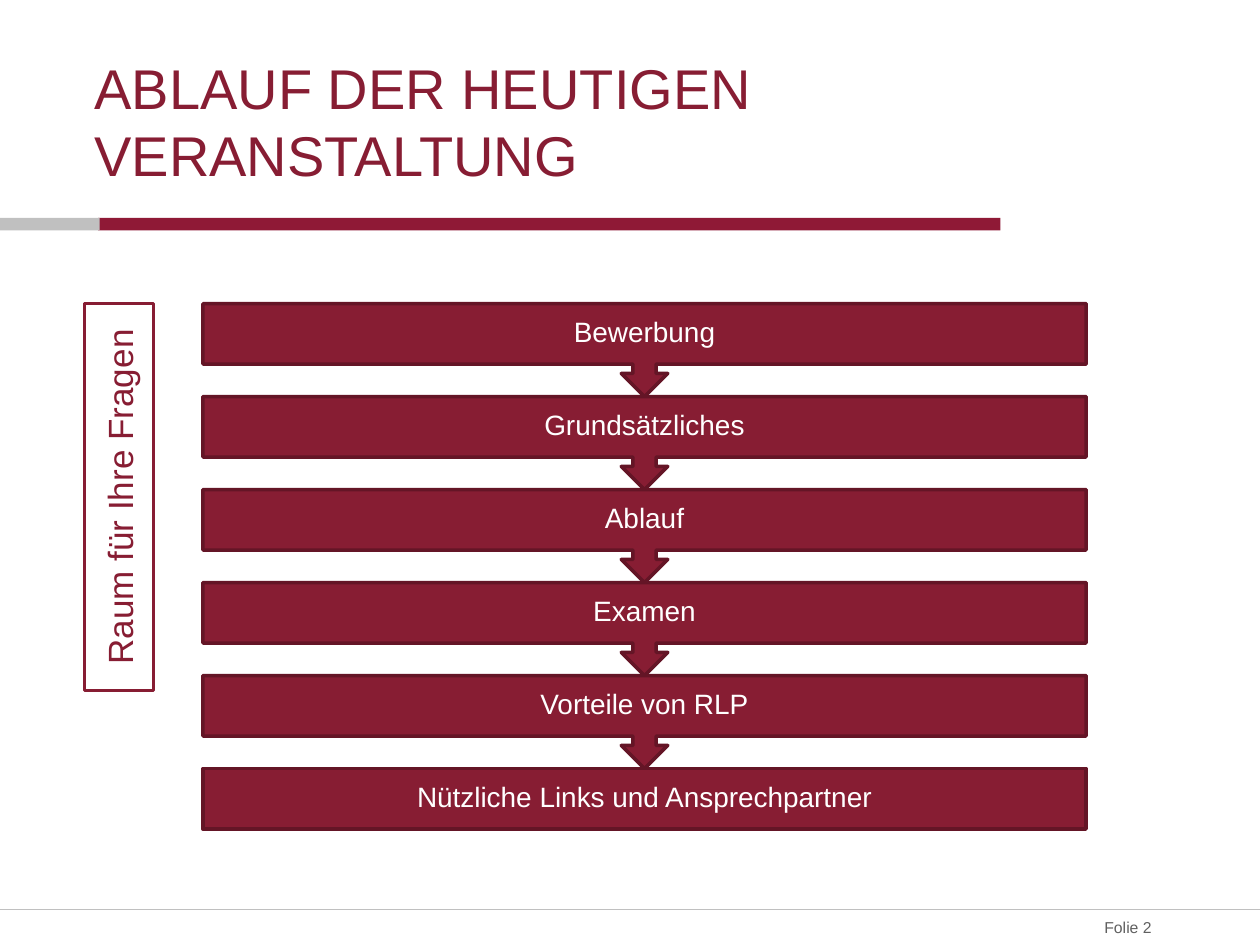
from lxml import etree
from pptx import Presentation
from pptx.dml.color import RGBColor
from pptx.enum.shapes import MSO_CONNECTOR, MSO_SHAPE
from pptx.enum.text import MSO_ANCHOR, PP_ALIGN
from pptx.oxml.ns import qn
from pptx.util import Inches, Pt

RECT = MSO_SHAPE.RECTANGLE
CALLOUT = MSO_SHAPE.UP_ARROW_CALLOUT
STRAIGHT = MSO_CONNECTOR.STRAIGHT
MIDDLE, BOTTOM = MSO_ANCHOR.MIDDLE, MSO_ANCHOR.BOTTOM
LEFT, CENTER, RIGHT = PP_ALIGN.LEFT, PP_ALIGN.CENTER, PP_ALIGN.RIGHT

WINE = RGBColor(0x87, 0x1D, 0x33)
DARK_WINE = RGBColor(0x64, 0x15, 0x26)
BAR_RED = RGBColor(0x8F, 0x19, 0x36)
SILVER = RGBColor(0xC0, 0xC0, 0xC0)
GRAY = RGBColor(0x60, 0x60, 0x60)
WHITE = RGBColor(0xFF, 0xFF, 0xFF)

STEPS = ["Bewerbung", "Grundsätzliches", "Ablauf", "Examen",
         "Vorteile von RLP", "Nützliche Links und Ansprechpartner"]


def write(shape, text, size, color, align, anchor=MIDDLE, margin=0, spacing=None):
    frame = shape.text_frame
    frame_format = {"word_wrap": True, "vertical_anchor": anchor}
    for side in ("left", "top", "right", "bottom"):
        frame_format[f"margin_{side}"] = Inches(margin)
    for name, value in frame_format.items():
        setattr(frame, name, value)
    paragraph = frame.paragraphs[0]
    paragraph.text = text
    paragraph.alignment = align
    paragraph.line_spacing = spacing
    for name, value in {"name": "Arial", "size": Pt(size)}.items():
        setattr(paragraph.font, name, value)
    paragraph.font.color.rgb = color


def add_label(slide, box, *args, **kwargs):
    label = slide.shapes.add_textbox(*map(Inches, box))
    write(label, *args, **kwargs)


def add_block(slide, kind, box, fill, line=None, rotation=0):
    block = slide.shapes.add_shape(kind, *map(Inches, box))
    block.shadow.inherit = False
    block.rotation = rotation
    block.fill.solid()
    block.fill.fore_color.rgb = fill
    if line is None:
        block.line.fill.background()
    else:
        block.line.color.rgb = line
        block.line.width = Pt(2)
    return block


def add_header(slide, left, top, width, height):
    add_label(slide, (left, top, width, height),
              "ABLAUF DER HEUTIGEN VERANSTALTUNG", 32, WINE, LEFT, BOTTOM)
    bar_top = top + height + 0.24
    add_block(slide, RECT, (0.78, bar_top, 7.16, 0.1), BAR_RED)
    add_block(slide, RECT, (0, bar_top, 0.79, 0.1), SILVER)


def add_footer(slide, left, top, width, height):
    rule = slide.shapes.add_connector(
        STRAIGHT, Inches(left), Inches(top), Inches(left + width), Inches(top))
    rule.line.color.rgb = SILVER
    rule.line.width = Pt(0.75)
    etree.SubElement(rule._element.spPr, qn("a:effectLst"))
    add_label(slide, (7.94, top, 1.2, height), "Folie 2", 9, GRAY, RIGHT)


def add_agenda(slide, left, top, width, height):
    step_height = 0.48
    pitch = (height - step_height) / (len(STEPS) - 1)
    last = len(STEPS) - 1
    for index, step in reversed(list(enumerate(STEPS))):
        step_top = top + index * pitch
        if index == last:
            add_block(slide, RECT, (left, step_top, width, step_height),
                      WINE, DARK_WINE)
        else:
            add_block(slide, CALLOUT, (left, step_top, width, pitch),
                      WINE, DARK_WINE, 180)
        add_label(slide, (left, step_top, width, step_height), step, 16, WHITE,
                  CENTER, margin=0.12, spacing=0.9)


def add_question_banner(slide, left, top, width, height):
    turned_box = (left + (width - height) / 2, top + (height - width) / 2,
                  height, width)
    banner = add_block(slide, RECT, turned_box, WHITE, WINE, 270)
    write(banner, "Raum für Ihre Fragen", 20, WINE, CENTER, margin=0.05)


def main():
    deck = Presentation()
    deck.slide_width, deck.slide_height = Inches(10), Inches(7.5)
    slide = deck.slides.add_slide(deck.slide_layouts[6])
    add_header(slide, 0.75, 0.48, 6.39, 1.01)
    add_footer(slide, 0, 7.22, 10, 0.28)
    add_agenda(slide, 1.61, 2.41, 7.01, 4.17)
    add_question_banner(slide, 0.67, 2.41, 0.55, 3.07)
    deck.save("out.pptx")


if __name__ == "__main__":
    main()
